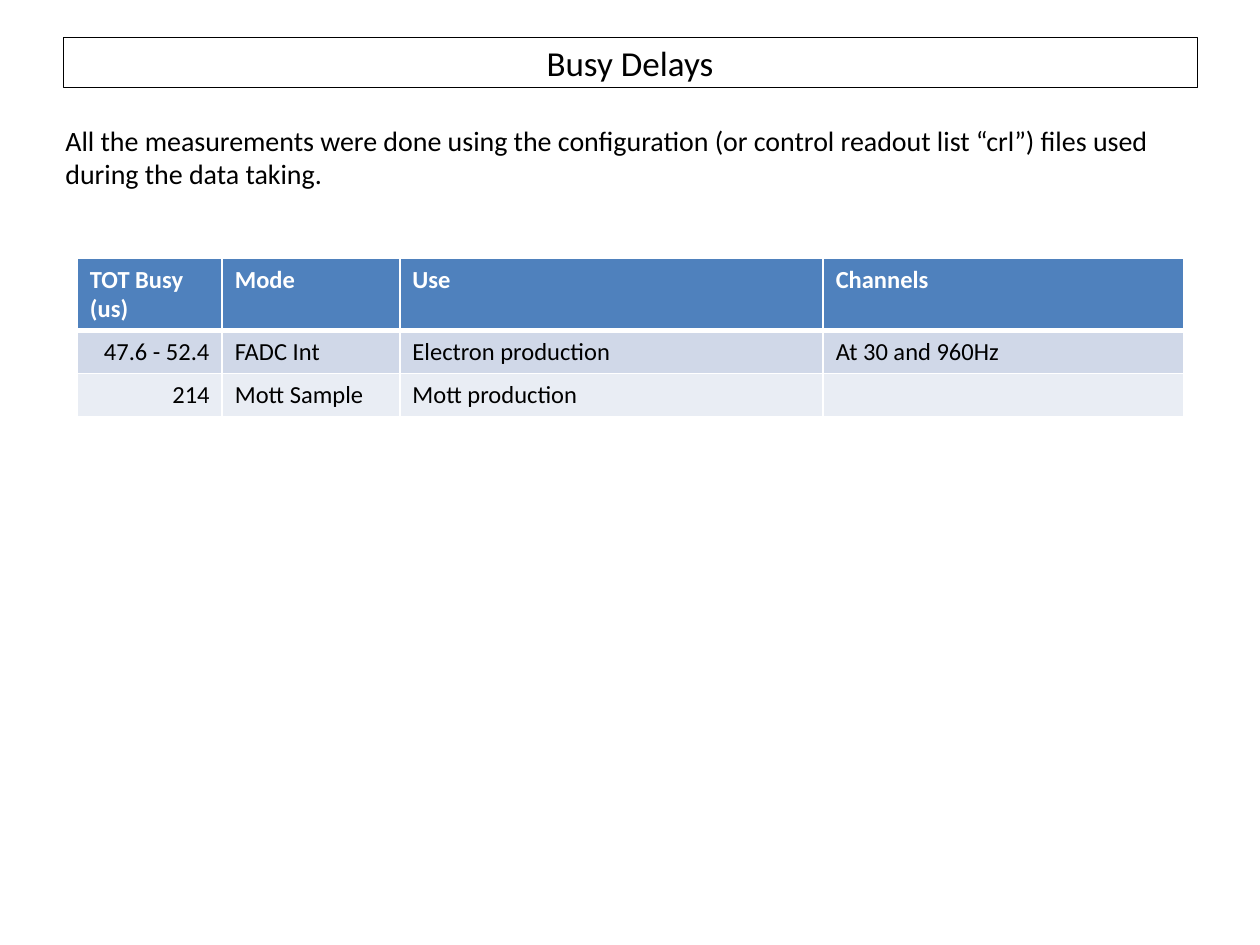
from dataclasses import dataclass

from pptx import Presentation
from pptx.dml.color import RGBColor
from pptx.enum.shapes import MSO_SHAPE
from pptx.enum.text import MSO_ANCHOR, PP_ALIGN
from pptx.oxml.ns import qn
from pptx.oxml.xmlchemy import OxmlElement
from pptx.util import Cm, Pt


@dataclass(frozen=True)
class Theme:
    font: str = "Calibri"
    title: int = 20
    body: int = 16
    cell: int = 14
    ink: str = "000000"
    paper: str = "FFFFFF"
    head: str = "4F81BD"
    bands: tuple = ("D0D8E8", "E9EDF4")


THEME = Theme()
ROWS = [
    ("TOT Busy (us)", "Mode", "Use", "Channels"),
    ("47.6 - 52.4", "FADC Int", "Electron production", "At 30 and 960Hz"),
    ("214", "Mott Sample", "Mott production", ""),
]


def rgb(color):
    return RGBColor.from_string(color)


def add_run(p, text, size, color=THEME.ink, bold=False):
    r = p.add_run()
    r.text = text
    r.font.name = THEME.font
    r.font.size = Pt(size)
    r.font.bold = bold
    r.font.color.rgb = rgb(color)


def add_title(s, x, y, w, h):
    sp = s.shapes.add_shape(MSO_SHAPE.RECTANGLE, x, y, w, h)
    sp.shadow.inherit = False
    sp.fill.background()
    sp.line.color.rgb = rgb(THEME.ink)
    sp.line.width = Pt(0.25)
    tf = sp.text_frame
    tf.word_wrap = True
    tf.vertical_anchor = MSO_ANCHOR.MIDDLE
    p = tf.paragraphs[0]
    p.alignment = PP_ALIGN.CENTER
    add_run(p, "Busy Delays", THEME.title)


def add_intro(s, x, y, w, h):
    tf = s.shapes.add_textbox(x, y, w, h).text_frame
    tf.word_wrap = True
    add_run(
        tf.paragraphs[0],
        "All the measurements were done using the configuration (or control "
        "readout list “crl”) files used during the data taking.",
        THEME.body,
    )


def set_borders(cell, bottom):
    tcPr = cell._tc.get_or_add_tcPr()
    widths = {"a:lnL": 1, "a:lnR": 1, "a:lnT": 1, "a:lnB": bottom}
    for i, (tag, width) in enumerate(widths.items()):
        ln = OxmlElement(tag)
        ln.set("w", str(Pt(width)))
        fill = OxmlElement("a:solidFill")
        color = OxmlElement("a:srgbClr")
        color.set("val", THEME.paper)
        fill.append(color)
        ln.append(fill)
        tcPr.insert(i, ln)  # borders come before the cell fill


def fill_cell(cell, text, row, col):
    header = row == 0
    cell.fill.solid()
    cell.fill.fore_color.rgb = rgb(THEME.head if header else THEME.bands[(row - 1) % 2])
    # The rule under the header is shared with the first body row
    set_borders(cell, bottom=3 if header else 1)
    if row == 1:
        cell._tc.tcPr.find(qn("a:lnT")).set("w", str(Pt(3)))
    p = cell.text_frame.paragraphs[0]
    if col == 0 and not header:
        p.alignment = PP_ALIGN.RIGHT
    if text:
        add_run(p, text, THEME.cell, THEME.paper if header else THEME.ink, header)
    else:
        # Keeps an empty cell from stretching its row
        end = OxmlElement("a:endParaRPr")
        end.set("sz", str(THEME.cell * 100))
        p._p.append(end)


def add_busy_table(s, x, y, w, h):
    tbl = s.shapes.add_table(len(ROWS), len(ROWS[0]), x, y, w, h).table
    shares = (1.15, 1.41, 3.36, 2.86)
    for column, share in zip(tbl.columns, shares):
        column.width = int(w * share / sum(shares))
    # The header holds two lines of text
    heights = (0.55, 0.34, 0.34)
    for row, share in zip(tbl.rows, heights):
        row.height = int(h * share / sum(heights))
    for i, texts in enumerate(ROWS):
        for j, text in enumerate(texts):
            fill_cell(tbl.cell(i, j), text, i, j)


def main():
    prs = Presentation()
    prs.slide_width, prs.slide_height = Cm(25.4), Cm(19.05)
    s = prs.slides.add_slide(prs.slide_layouts[6])
    add_title(s, Cm(1.27), Cm(0.76), Cm(22.86), Cm(1))
    add_busy_table(s, Cm(1.56), Cm(5.21), Cm(22.3), Cm(3.12))
    add_intro(s, Cm(1.07), Cm(2.36), Cm(23.16), Cm(1.62))
    prs.save("out.pptx")


if __name__ == "__main__":
    main()
